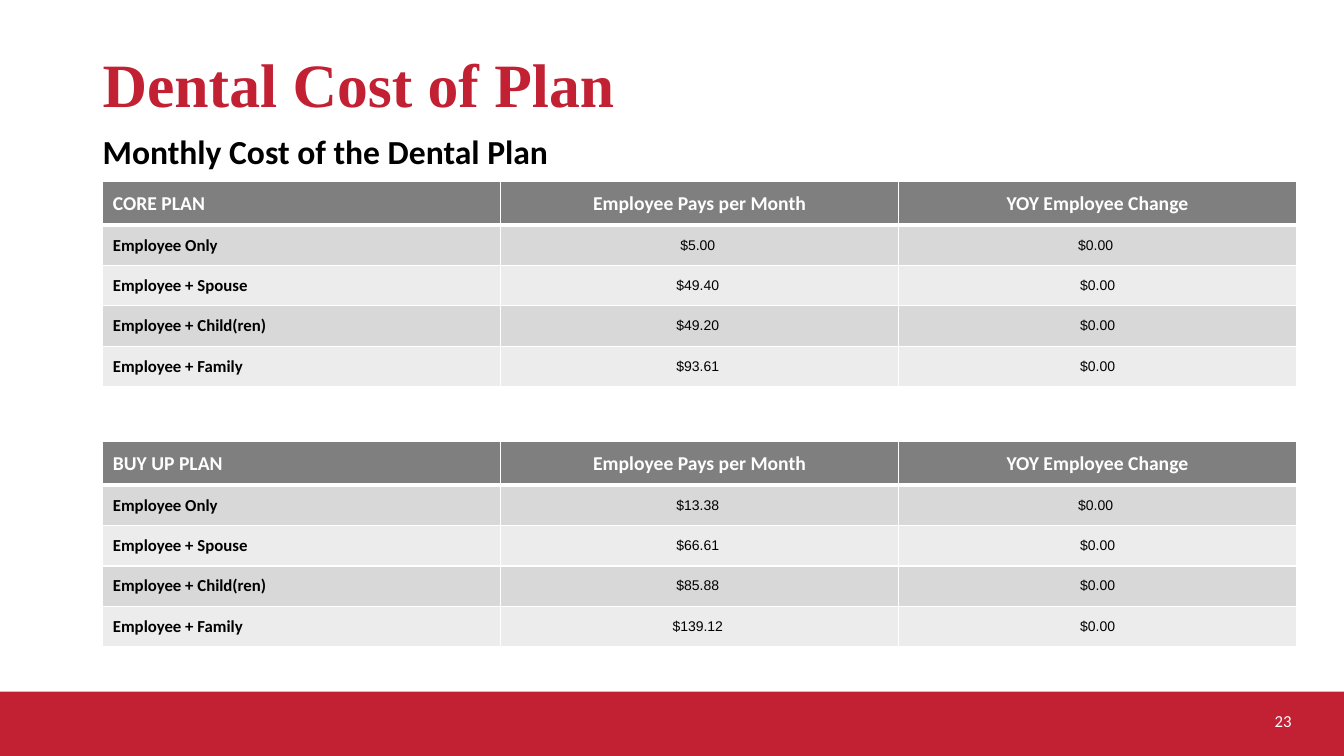
"""Build the slide of monthly dental plan costs."""
from lxml import etree
from pptx import Presentation
from pptx.dml.color import RGBColor
from pptx.enum.shapes import MSO_SHAPE
from pptx.enum.text import MSO_ANCHOR, PP_ALIGN
from pptx.oxml.ns import qn
from pptx.util import Inches, Pt

RECT = MSO_SHAPE.RECTANGLE
MIDDLE, BOTTOM = MSO_ANCHOR.MIDDLE, MSO_ANCHOR.BOTTOM
LEFT, CENTER, RIGHT = PP_ALIGN.LEFT, PP_ALIGN.CENTER, PP_ALIGN.RIGHT

THEME = {
    "red": "C22033", "white": "FFFFFF", "black": "000000",
    "head": "7F7F7F", "bands": ("D8D8D8", "ECECEC"),
    "title": ("Times New Roman", 44, True), "sub": ("Calibri", 24, True),
    "header": ("Calibri", 14, True), "label": ("Calibri", 12, True),
    "price": ("Arial", 10, False), "page": ("Calibri", 12, False),
}

deck = Presentation()
deck.slide_width, deck.slide_height = Inches(13.33), Inches(7.5)
COL, ROW = deck.slide_width / 100, deck.slide_height / 100
slide = deck.slides.add_slide(deck.slide_layouts[6])


def place(left, top, wide, high):
    """Turn percent of the slide into lengths."""
    return int(left * COL), int(top * ROW), int(wide * COL), int(high * ROW)


def write(frame, text, style, color, align):
    """Fill a text frame with one styled paragraph."""
    para = frame.paragraphs[0]
    para.text, para.alignment = text, align
    font = para.font
    font.name, size, font.bold = THEME[style]
    font.size = Pt(size)
    font.color.rgb = RGBColor.from_string(THEME[color])
    return para


band = slide.shapes.add_shape(RECT, *place(0, 91.47, 100, 8.53))
band.shadow.inherit = False
band.fill.solid()
band.fill.fore_color.rgb = RGBColor.from_string(THEME["red"])
band.line.fill.background()

for text, style, color, align, anchor, pad, area in (
    ("23", "page", "white", RIGHT, MIDDLE, 0.05, (66.92, 92.67, 29.93, 5.33)),
    ("Monthly Cost of the Dental Plan", "sub", "black", LEFT, BOTTOM, 0, (6.9, 17.33, 86.27, 5.33)),
    ("Dental Cost of Plan", "title", "red", LEFT, BOTTOM, 0, (6.9, 5.33, 86.27, 10.67)),
):
    frame = slide.shapes.add_textbox(*place(*area)).text_frame
    frame.word_wrap, frame.vertical_anchor = True, anchor
    frame.margin_top = frame.margin_bottom = Inches(pad)
    para = write(frame, text, style, color, align)
    if style == "title":
        para.line_spacing = 0.9

TIERS = ("Employee Only", "Employee + Spouse", "Employee + Child(ren)", "Employee + Family")
CHANGES = ("$0.00 ", "$0.00", "$0.00", "$0.00")
PLANS = (
    ("CORE PLAN", 24, ("$5.00 ", "$49.40 ", "$49.20 ", "$93.61 ")),
    ("BUY UP PLAN", 58.4, ("$13.38 ", "$66.61 ", "$85.88 ", "$139.12 ")),
)

for plan, top, prices in PLANS:
    rows = [(plan, "Employee Pays per Month", "YOY Employee Change"), *zip(TIERS, prices, CHANGES)]
    table = slide.shapes.add_table(len(rows), 3, *place(7.65, top, 88.82, 25.75)).table
    for r, row in enumerate(rows):
        table.rows[r].height = int((5.07 if r else 5.47) * ROW)
        for c, text in enumerate(row):
            cell = table.cell(r, c)
            cell.vertical_anchor = MIDDLE
            pad = Inches(0 if r and c else 0.1)
            cell.margin_left = cell.margin_right = pad
            cell.margin_top = cell.margin_bottom = pad
            style = "header" if r == 0 else "price" if c else "label"
            write(cell.text_frame, text, style, "black" if r else "white", CENTER if c else LEFT)
            props = cell._tc.get_or_add_tcPr()
            for side in "LRTB":
                thick = (r, side) in ((0, "B"), (1, "T"))
                line = etree.SubElement(props, qn(f"a:ln{side}"), w=str(Pt(3 if thick else 1)))
                fill = etree.SubElement(line, qn("a:solidFill"))
                etree.SubElement(fill, qn("a:srgbClr"), val=THEME["white"])
            cell.fill.solid()
            shade = THEME["bands"][(r - 1) % 2] if r else THEME["head"]
            cell.fill.fore_color.rgb = RGBColor.from_string(shade)

deck.save("out.pptx")
